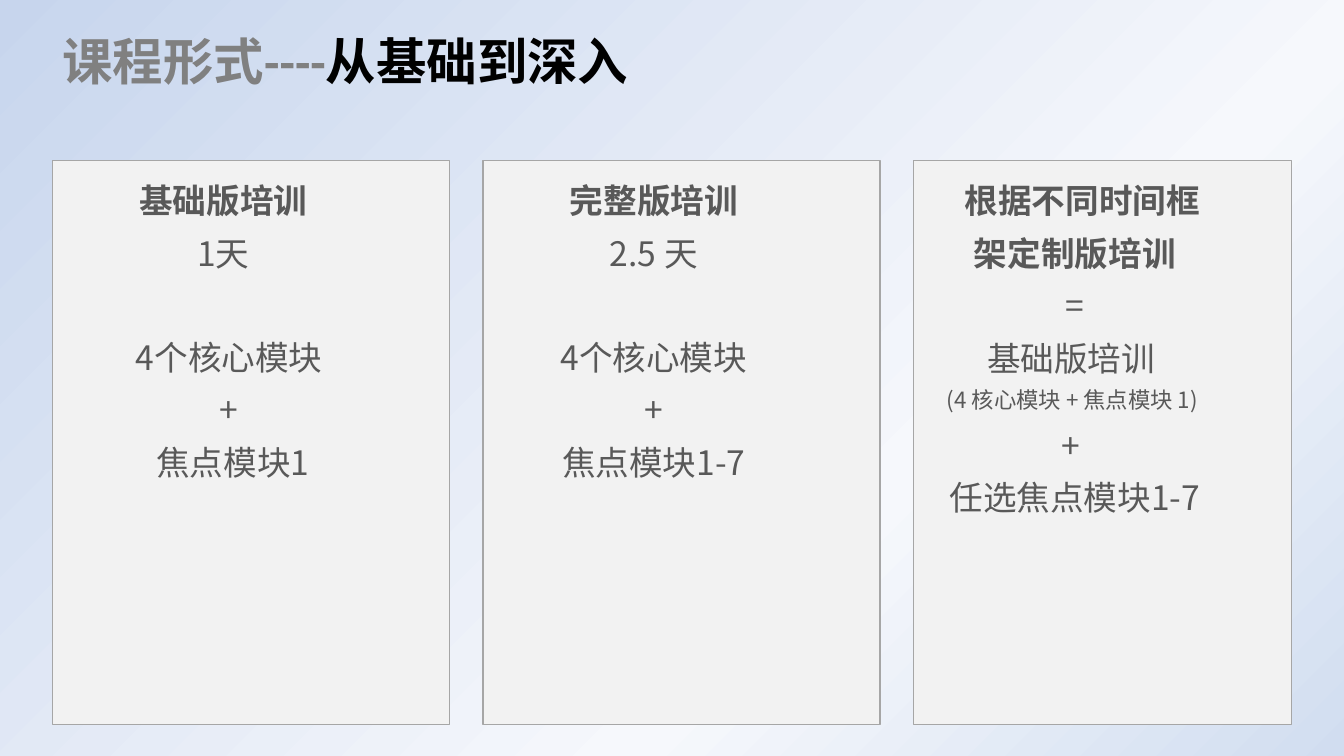
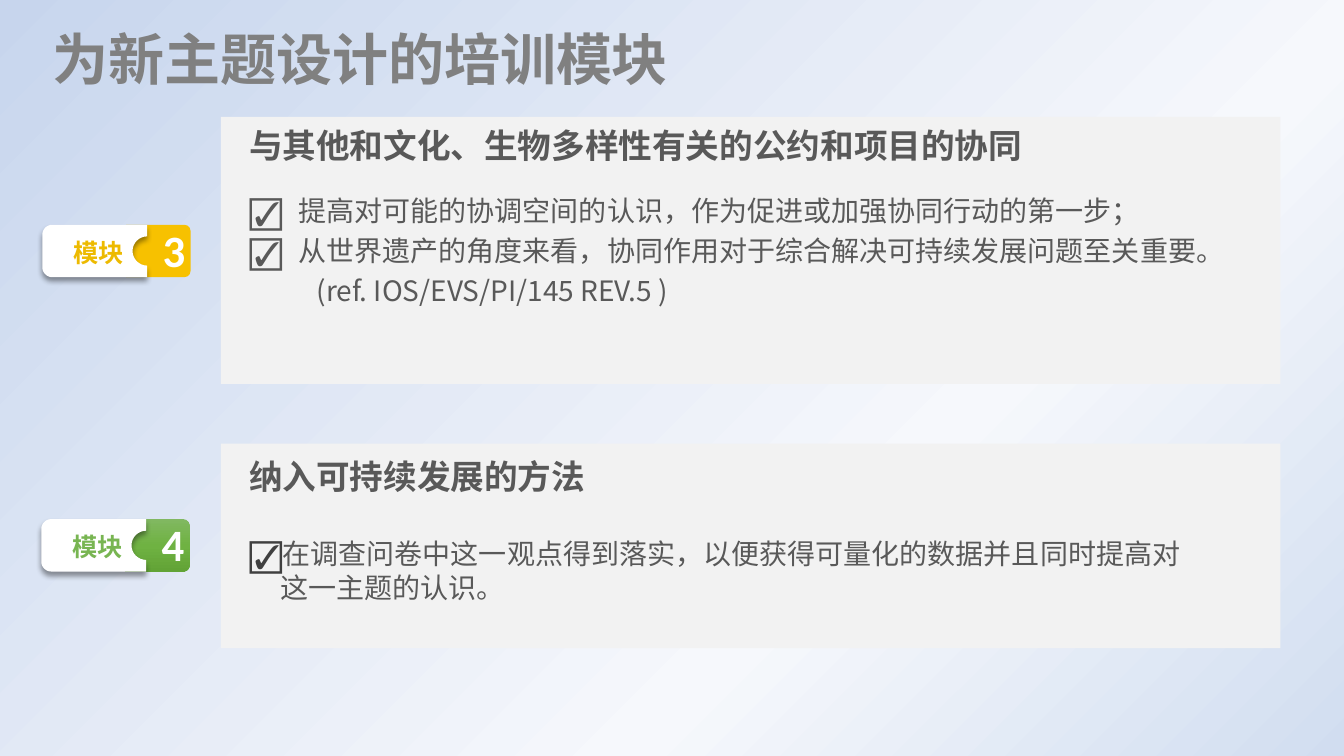
from math import cos, radians, sin

from lxml import etree
from pptx import Presentation
from pptx import util as u
from pptx.dml.color import RGBColor
from pptx.enum import shapes, text
from pptx.oxml import ns, parse_xml

PX = 9144
WIDE, HIGH = 1333, 750
CJK, LATIN = "Noto Sans CJK SC", "Calibri"
WHITE = RGBColor(0xFF, 0xFF, 0xFF)
BLACK = RGBColor(0, 0, 0)
GREY = RGBColor(0x80, 0x80, 0x80)
INK = RGBColor(0x59, 0x59, 0x59)
PALE = RGBColor(0xF2, 0xF2, 0xF2)
EDGE = RGBColor(0xA6, 0xA6, 0xA6)
GOLD = RGBColor(0xF7, 0xC1, 0x00)
AMBER = RGBColor(0xED, 0xBA, 0x00)
GREEN = RGBColor(0x78, 0xB5, 0x52)
SKY = [(0, RGBColor(0xD1, 0xDD, 0xF0)), (34, RGBColor(0xF6, 0xF8, 0xFC)),
       (100, RGBColor(0xC7, 0xD5, 0xED))]
LEAF = [(0, RGBColor(0x81, 0xB8, 0x61)), (50, RGBColor(0x6F, 0xB2, 0x42)),
        (100, RGBColor(0x62, 0xA3, 0x36))]
RADIAL = '<a:path path="circle"><a:fillToRect l="100000" t="100000"/></a:path>'
DOWN = '<a:lin ang="5400000" scaled="0"/>'


def node(xml):
    head, tail = xml.split(" ", 1) if " " in xml.split(">")[0] else (xml.split(">")[0], ">" + xml.split(">", 1)[1])
    return parse_xml(f'{head} {ns.nsdecls("a")} {tail}')


def blend(fill, owner, stops, way):
    fill.gradient()
    grad = owner.find(".//" + ns.qn("a:gradFill"))
    marks = "".join(f'<a:gs pos="{at * 1000}"><a:srgbClr val="{tone}"/></a:gs>' for at, tone in stops)
    fresh = node(f'<a:gradFill rotWithShape="0"><a:gsLst>{marks}</a:gsLst>{way}</a:gradFill>')
    grad.getparent().replace(grad, fresh)


def place(shape, box):
    shape.left, shape.top, shape.width, shape.height = [n * PX for n in box]


def setup(frame, pads, wrap=True):
    frame.word_wrap = wrap
    frame.auto_size = text.MSO_AUTO_SIZE.NONE
    frame.vertical_anchor = text.MSO_ANCHOR.TOP
    frame.margin_left, frame.margin_top, frame.margin_right, frame.margin_bottom = [n * PX for n in pads]


def write(para, words, size, tone, face=CJK, bold=False):
    run = para.add_run()
    run.text = words
    font = run.font
    font.size, font.bold, font.name = u.Pt(size), bold, face
    font.color.rgb = tone
    etree.SubElement(run._r.get_or_add_rPr(), ns.qn("a:ea")).set("typeface", CJK)


def line(frame, first, align, space=1.0, gap=0, left=0, indent=0, mark=None):
    para = frame.paragraphs[0] if first else frame.add_paragraph()
    para.alignment, para.line_spacing = align, space
    para.space_before, para.space_after = u.Pt(gap), u.Pt(0)
    props = para._p.get_or_add_pPr()
    props.set("marL", str(left * PX))
    props.set("indent", str(indent * PX))
    if mark:
        props.append(node(f'<a:buClr><a:srgbClr val="{mark}"/></a:buClr>'))
        props.append(node('<a:buSzPct val="120000"/>'))
        props.append(node(f'<a:buFont typeface="{CJK}"/>'))
        props.append(node('<a:buChar char="☑"/>'))
    else:
        props.append(node('<a:buNone />'))
    return para


def title(slide, box, size, runs):
    shape = slide.shapes.title
    place(shape, box)
    setup(shape.text_frame, (10, 5, 10, 5))
    para = line(shape.text_frame, True, text.PP_ALIGN.LEFT)
    for words, tone in runs:
        write(para, words, size, tone, LATIN, True)


def card(slide, box, rows):
    shape = slide.shapes.add_shape(shapes.MSO_SHAPE.RECTANGLE, *[n * PX for n in box])
    shape.shadow.inherit = False
    shape.fill.solid()
    shape.fill.fore_color.rgb = PALE
    shape.line.color.rgb = EDGE
    shape.line.width = u.Pt(1)
    frame = shape.text_frame
    setup(frame, (28, 8, 83, 5))
    for i, (words, size, indent, gap) in enumerate(rows):
        para = line(frame, i == 0, text.PP_ALIGN.CENTER, 1.3, gap, indent=indent)
        write(para, words, size, INK, bold=i == 0)


def panel(shape, box, top, head, rows):
    place(shape, box)
    shape.fill.solid()
    shape.fill.fore_color.rgb = PALE
    frame = shape.text_frame
    setup(frame, (28, top, 83, 5))
    write(line(frame, True, text.PP_ALIGN.LEFT), head, 24, INK, bold=True)
    for words, form in rows:
        write(line(frame, False, text.PP_ALIGN.LEFT, **form), words, 20, INK)


def label(group, box, words, size, tone, face):
    shape = group.shapes.add_textbox(*[n * PX for n in box])
    setup(shape.text_frame, (0, 0, 0, 0), False)
    para = line(shape.text_frame, True, text.PP_ALIGN.CENTER)
    write(para, words, size, tone, face, True)


def arc(x, y, radius, start, end, steps=16):
    turns = [radians(start + (end - start) * i / steps) for i in range(steps + 1)]
    return [(x + radius * cos(t), y + radius * sin(t)) for t in turns]


def plate(group, x, y):
    points = [(104, 0), *arc(104, 26, 14.5, 270, 90), (104, 52),
              *arc(10, 42, 10, 90, 180), *arc(10, 10, 10, 180, 270)]
    spots = [((x + a) * PX, (y + b) * PX) for a, b in points]
    pen = group.shapes.build_freeform(*spots[0], scale=1.0)
    pen.add_line_segments(spots[1:], close=True)
    shape = pen.convert_to_shape()
    shape.fill.solid()
    shape.fill.fore_color.rgb = WHITE
    shape.line.fill.background()
    shape.shadow.inherit = False
    effects = shape._element.spPr.find(ns.qn("a:effectLst"))
    effects.append(node(
        f'<a:outerShdw blurRad="{u.Pt(4)}" dist="{u.Pt(3)}" dir="5400000" rotWithShape="0">'
        '<a:srgbClr val="000000"><a:alpha val="40000"/></a:srgbClr></a:outerShdw>'))


def badge(slide, x, y, digit, tone, paint):
    group = slide.shapes.add_group_shape()
    tab = group.shapes.add_shape(shapes.MSO_SHAPE.ROUND_2_SAME_RECTANGLE,
                                 *[n * PX for n in (x + 89, y - 6, 52, 64)])
    tab.rotation = 90
    tab.adjustments[0], tab.adjustments[1] = 0.12, 0
    tab.shadow.inherit = False
    tab.line.fill.background()
    if isinstance(paint, list):
        blend(tab.fill, tab._element, paint, DOWN)
    else:
        tab.fill.solid()
        tab.fill.fore_color.rgb = paint
    label(group, (x + 116, y - 2, 29, 54), digit, 32, WHITE, LATIN)
    plate(group, x, y)
    label(group, (x + 17, y + 12, 77, 30), "模块", 18, tone, CJK)


def forms(deck):
    slide = deck.slides.add_slide(deck.slide_layouts[5])
    title(slide, (52, 25, 1248, 71), 36, [("课程形式----", GREY), ("从基础到深入", BLACK)])
    cards = [
        (394, [("基础版培训", 24, 0, 0), ("1天", 24, 0, 0), ("4个核心模块 ", 24, 19, 37),
               ("+ ", 24, 19, 0), ("焦点模块1", 24, 19, 0)]),
        (394, [("完整版培训", 24, 0, 0), ("2.5 天", 24, 0, 0), ("4个核心模块", 24, 0, 37),
               (" + ", 24, 0, 0), ("焦点模块1-7", 24, 0, 0)]),
        (375, [("根据不同时间框架定制版培训", 24, 15, 0), ("=", 24, 0, 0), ("基础版培训 ", 24, 0, 0),
               ("(4 核心模块 + 焦点模块 1) ", 16, 0, 0), ("+ ", 24, 0, 0),
               ("任选焦点模块1-7", 24, 0, 0)]),
    ]
    for i, (width, rows) in enumerate(cards):
        card(slide, (52 + 427 * i, 159, width, 560), rows)


def topics(deck):
    slide = deck.slides.add_slide(deck.slide_layouts[3])
    title(slide, (42, 19, 1229, 77), 40, [("为新主题设计的培训模块", GREY)])
    upper, lower = slide.placeholders[1], slide.placeholders[2]
    item = dict(space=1.2, left=49, indent=-49, mark=INK)
    panel(upper, (219, 116, 1051, 265), 8, "与其他和文化、生物多样性有关的公约和项目的协同", [
        ("提高对可能的协调空间的认识，作为促进或加强协同行动的第一步；", dict(item, gap=15)),
        ("从世界遗产的角度来看，协同作用对于综合解决可持续发展问题至关重要。", item),
        ("(ref. IOS/EVS/PI/145 REV.5 )", dict(space=1.2, left=67)),
    ])
    panel(lower, (219, 440, 1051, 203), 12, "纳入可持续发展的方法", [
        ("在调查问卷中这一观点得到落实，以便获得可量化的数据并且同时提高对这一主题的认识。",
         dict(gap=29, left=31, indent=-31, mark=RGBColor(0x40, 0x40, 0x40))),
    ])
    badge(slide, 42, 223, "3", AMBER, GOLD)
    badge(slide, 41, 515, "4", GREEN, LEAF)


def main():
    deck = Presentation()
    deck.slide_width, deck.slide_height = WIDE * PX, HIGH * PX
    master = deck.slide_master
    blend(master.background.fill, master.element, SKY, RADIAL)
    forms(deck)
    topics(deck)
    deck.save("out.pptx")


if __name__ == "__main__":
    main()
